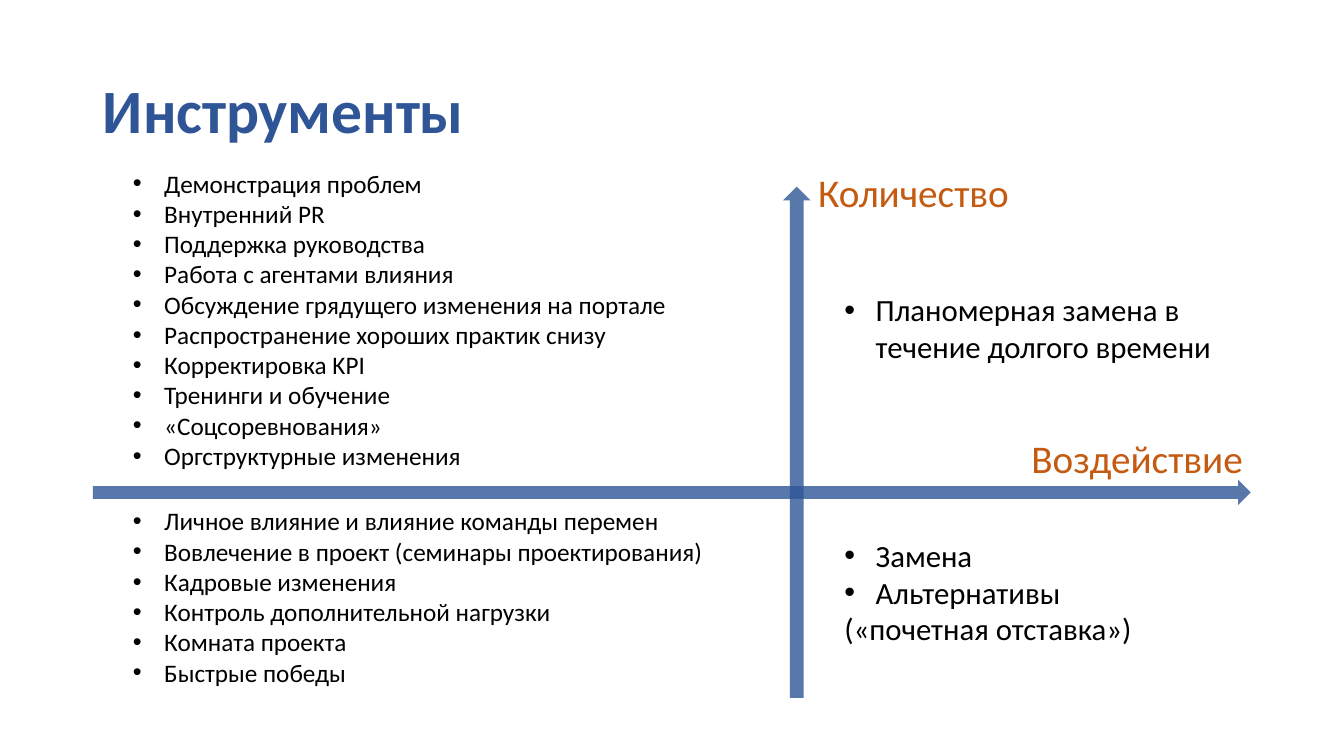
import pptx
import pptx.dml.color
import pptx.enum.shapes
import pptx.enum.text
import pptx.oxml
import pptx.oxml.ns
import pptx.util
from pptx.util import Cm

BLUE = pptx.dml.color.RGBColor(0x2F, 0x55, 0x97)
ORANGE = pptx.dml.color.RGBColor(0xC5, 0x5A, 0x11)
BLACK = pptx.dml.color.RGBColor(0x00, 0x00, 0x00)
FONT = "Calibri"
BULLET_INDENT = Cm(0.79)
TITLE_ONLY_LAYOUT = 5

MANY_LOW_IMPACT = [
    "Демонстрация проблем",
    "Внутренний PR",
    "Поддержка руководства",
    "Работа с агентами влияния",
    "Обсуждение грядущего изменения на портале",
    "Распространение хороших практик снизу",
    "Корректировка KPI",
    "Тренинги и обучение",
    "«Соцсоревнования»",
    "Оргструктурные изменения",
]
FEW_LOW_IMPACT = [
    "Личное влияние и влияние команды перемен",
    "Вовлечение в проект (семинары проектирования)",
    "Кадровые изменения",
    "Контроль дополнительной нагрузки",
    "Комната проекта",
    "Быстрые победы",
]
MANY_HIGH_IMPACT = ["Планомерная замена в течение долгого времени"]
FEW_HIGH_IMPACT = ["Замена", "Альтернативы"]


def write_paragraph(paragraph, text, size=18, color=BLACK, bold=False,
                    align=pptx.enum.text.PP_ALIGN.LEFT, bullet=False):
    run = paragraph.add_run()
    run.text = text
    run.font.name = FONT
    run.font.size = pptx.util.Pt(size)
    run.font.bold = bold
    run.font.color.rgb = color
    paragraph.alignment = align
    if bullet:
        properties = paragraph._p.get_or_add_pPr()
        properties.set("marL", str(BULLET_INDENT))
        properties.set("indent", str(-BULLET_INDENT))
        namespace = pptx.oxml.ns.nsdecls("a")
        for markup in (f'<a:buFont {namespace} typeface="Arial"/>',
                       f'<a:buChar {namespace} char="•"/>'):
            properties.append(pptx.oxml.parse_xml(markup))


def add_title(slide, text):
    title = slide.shapes.title
    title.left, title.top = Cm(2.34), Cm(1.02)
    title.width, title.height = Cm(29.21), Cm(3.68)
    title.text_frame.vertical_anchor = pptx.enum.text.MSO_ANCHOR.MIDDLE
    paragraph = title.text_frame.paragraphs[0]
    paragraph.line_spacing = 0.9
    write_paragraph(paragraph, text, size=44, color=BLUE, bold=True)


def add_text_box(slide, left, top, width, height, wrap=True):
    frame = slide.shapes.add_textbox(Cm(left), Cm(top), Cm(width), Cm(height)).text_frame
    frame.word_wrap = wrap
    frame.auto_size = pptx.enum.text.MSO_AUTO_SIZE.SHAPE_TO_FIT_TEXT
    return frame


def add_bullet_list(slide, items, left, top, width, height, size):
    frame = add_text_box(slide, left, top, width, height)
    for index, item in enumerate(items):
        paragraph = frame.add_paragraph() if index else frame.paragraphs[0]
        write_paragraph(paragraph, item, size=size, bullet=True)
    return frame


def add_axis(slide, left, top, width, height, rotation=0):
    arrow = slide.shapes.add_shape(pptx.enum.shapes.MSO_SHAPE.RIGHT_ARROW,
                                   Cm(left), Cm(top), Cm(width), Cm(height))
    arrow.rotation = rotation
    arrow.shadow.inherit = False
    arrow.line.fill.background()
    arrow.fill.solid()
    arrow.fill.fore_color.rgb = BLUE
    color = arrow._element.spPr.find(".//" + pptx.oxml.ns.qn("a:srgbClr"))
    color.append(pptx.oxml.parse_xml(
        f'<a:alpha {pptx.oxml.ns.nsdecls("a")} val="80000"/>'))


def add_axis_label(slide, text, left, top, width, align):
    frame = add_text_box(slide, left, top, width, 1.45, wrap=False)
    write_paragraph(frame.paragraphs[0], text, size=28, color=ORANGE, align=align)


def main():
    presentation = pptx.Presentation()
    presentation.slide_width = Cm(33.87)
    presentation.slide_height = Cm(19.05)
    slide = presentation.slides.add_slide(presentation.slide_layouts[TITLE_ONLY_LAYOUT])

    add_title(slide, "Инструменты")
    add_bullet_list(slide, MANY_HIGH_IMPACT, 21.03, 7.21, 10.52, 2.13, size=22)
    replacement = add_bullet_list(slide, FEW_HIGH_IMPACT, 21.03, 13.39, 10.52, 3.07, size=22)
    write_paragraph(replacement.add_paragraph(), "(«почетная отставка»)", size=22)
    add_bullet_list(slide, FEW_LOW_IMPACT, 3.1, 12.62, 16.79, 4.88, size=18)
    add_bullet_list(slide, MANY_LOW_IMPACT, 3.1, 4.11, 16.23, 7.95, size=18)

    add_axis(slide, 2.34, 12.09, 29.18, 0.64)
    add_axis(slide, 13.64, 10.8, 12.88, 0.69, rotation=270)
    add_axis_label(slide, "Воздействие", 25.68, 10.82, 5.89, pptx.enum.text.PP_ALIGN.RIGHT)
    add_axis_label(slide, "Количество", 20.37, 4.11, 5.36, pptx.enum.text.PP_ALIGN.LEFT)

    presentation.save("out.pptx")


if __name__ == "__main__":
    main()
